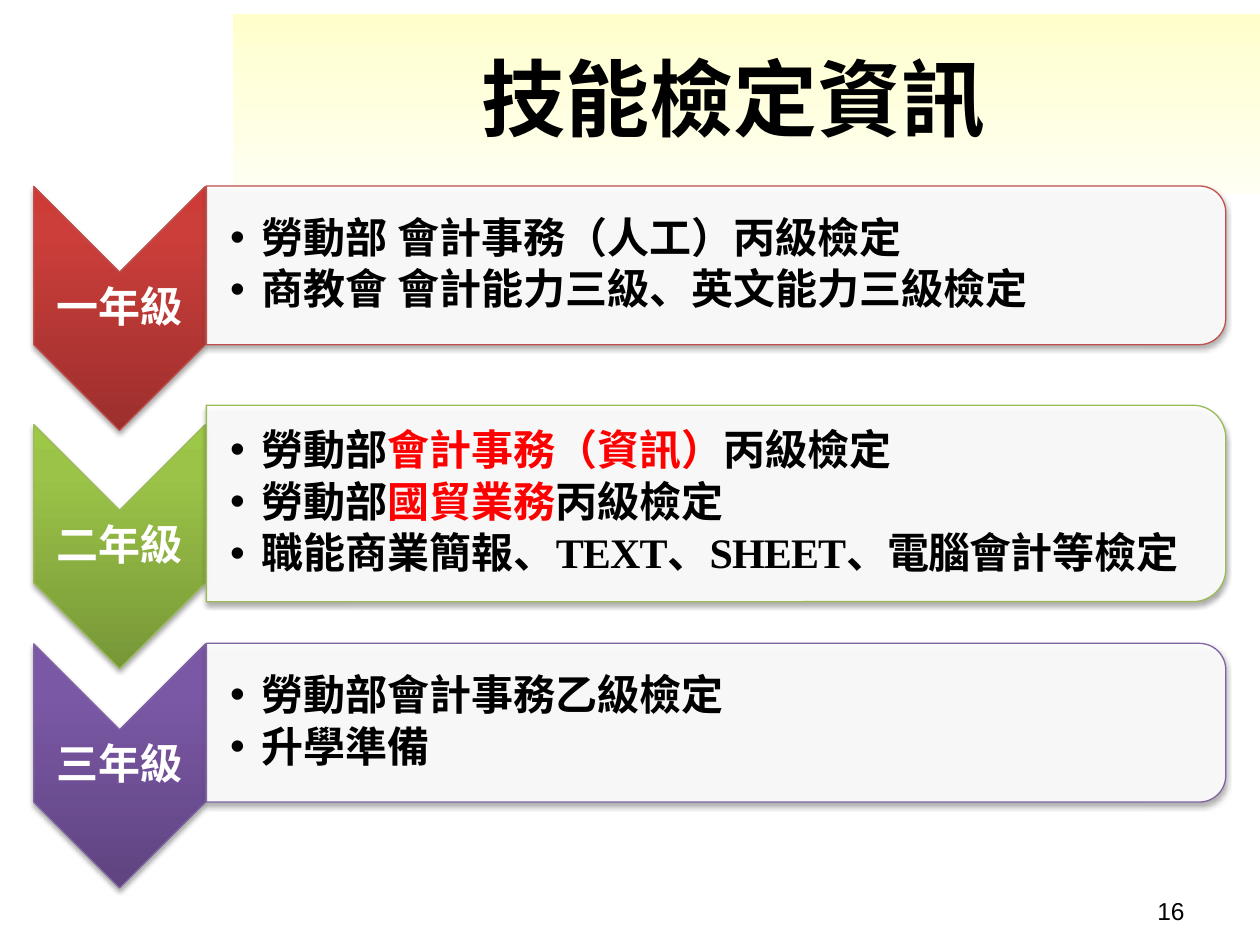
from lxml import etree
from pptx import Presentation
from pptx.dml.color import RGBColor
from pptx.enum.shapes import MSO_SHAPE
from pptx.enum.text import MSO_ANCHOR, PP_ALIGN
from pptx.oxml import parse_xml
from pptx.oxml.ns import nsdecls, qn
from pptx.util import Cm, Pt

RECT = MSO_SHAPE.RECTANGLE
CHEVRON = MSO_SHAPE.CHEVRON
PANEL = MSO_SHAPE.ROUND_2_SAME_RECTANGLE
TOP, MIDDLE = MSO_ANCHOR.TOP, MSO_ANCHOR.MIDDLE
LEFT, CENTER, RIGHT = PP_ALIGN.LEFT, PP_ALIGN.CENTER, PP_ALIGN.RIGHT

CJK, SERIF, SANS = "Noto Sans CJK SC", "Times New Roman", "Arial"
COLORS = {
    "black": "000000",
    "white": "FFFFFF",
    "red": "FF0000",
    "header": ["FFFFCC", "FFFFF3"],
    "first": ["9C2F2D", "CB3E3A", "CE3B37"],
    "first_line": "C0504D",
    "second": ["779737", "9BC348", "9DC746"],
    "second_line": "9BBB59",
    "third": ["5F4480", "7B58A6", "7C57A8"],
    "third_line": "8064A2",
}

CHEVRON_X, CHEVRON_W, CHEVRON_H = 2.41, 3.46, 4.92
PANEL_LEFT, PANEL_W = 4.16, 20.55
PANEL_RISE = 0.87

GRADES = [
    ("一年級", "first", 6.22, 3.2, [
        [("勞動部 會計事務（人工）丙級檢定", "black", 0)],
        [("商教會 會計能力三級、英文能力三級檢定", "black", 0)],
    ]),
    ("二年級", "second", 11.02, 3.96, [
        [("勞動部", "black", 0), ("會計事務（資訊）", "red", 0), ("丙級檢定", "black", 0)],
        [("勞動部", "black", 0), ("國貿業務", "red", 0), ("丙級檢定", "black", 0)],
        [("職能商業簡報", "black", 0), ("、TEXT、SHEET、電腦會計", "black", -50),
         ("等檢定", "black", 0)],
    ]),
    ("三年級", "third", 15.44, 3.2, [
        [("勞動部會計事務乙級檢定", "black", 0)],
        [("升學準備", "black", 0)],
    ]),
]


def rgb(key):
    return RGBColor.from_string(COLORS[key])


def fill_gradient(sp, colors, positions, angle):
    stops = "".join(
        f'<a:gs pos="{pos * 1000}"><a:srgbClr val="{color}"/></a:gs>'
        for pos, color in zip(positions, colors))
    sp._element.spPr.find(qn("a:prstGeom")).addnext(parse_xml(
        f'<a:gradFill {nsdecls("a")} rotWithShape="0"><a:gsLst>{stops}</a:gsLst>'
        f'<a:lin ang="{angle * 60000}" scaled="0"/></a:gradFill>'))


def add_shadow(sp):
    effects = sp._element.spPr.find(qn("a:effectLst"))
    effects.append(parse_xml(
        f'<a:outerShdw {nsdecls("a")} blurRad="{Pt(3.1)}" dist="{Pt(1.8)}" '
        'dir="5400000" rotWithShape="0"><a:srgbClr val="000000">'
        '<a:alpha val="35000"/></a:srgbClr></a:outerShdw>'))


def add_turned_shape(s, kind, x, y, width, height, line):
    sp = s.shapes.add_shape(kind, Cm(x - height / 2), Cm(y - width / 2),
                            Cm(height), Cm(width))
    sp.rotation = 90
    sp.shadow.inherit = False
    sp.line.color.rgb = rgb(line)
    sp.line.width = Pt(0.75)
    add_shadow(sp)
    return sp


def add_text_box(s, left, top, width, height, anchor, margins=None):
    tf = s.shapes.add_textbox(Cm(left), Cm(top), Cm(width), Cm(height)).text_frame
    tf.word_wrap = True
    tf.vertical_anchor = anchor
    if margins:
        tf.margin_left, tf.margin_right = Cm(margins[0]), Cm(margins[1])
        tf.margin_top = tf.margin_bottom = Cm(0.05)
    return tf


def format_run(r, size, font, color, bold=True):
    r.font.size = Pt(size)
    r.font.bold = bold
    r.font.name = font
    r.font.color.rgb = rgb(color)
    etree.SubElement(r.font._element, qn("a:ea")).set("typeface", CJK)


def add_line(tf, text, size, font, color, align, bold=True):
    tf.text = text
    p = tf.paragraphs[0]
    p.alignment = align
    format_run(p.runs[0], size, font, color, bold)
    return p


def add_bullet(p, runs):
    pPr = p._p.get_or_add_pPr()
    pPr.set("marL", str(Cm(0.64)))
    pPr.set("indent", str(Cm(-0.64)))
    etree.SubElement(pPr, qn("a:buFont")).set("typeface", SANS)
    etree.SubElement(pPr, qn("a:buChar")).set("char", "•")
    p.alignment = LEFT
    p.line_spacing = 0.9
    p.space_after = Pt(3.6)
    for text, color, spacing in runs:
        r = p.add_run()
        r.text = text
        format_run(r, 24, SERIF, color)
        if spacing:
            r.font._element.set("spc", str(spacing))


def add_header(s):
    sp = s.shapes.add_shape(RECT, Cm(4.7), Cm(0.28), Cm(20.7), Cm(3.63))
    sp.shadow.inherit = False
    sp.line.fill.background()
    fill_gradient(sp, COLORS["header"], [0, 100], 90)
    tf = add_text_box(s, 4.7, 0.97, 20.19, 1.96, MIDDLE)
    add_line(tf, "技能檢定資訊", 48, CJK, "black", CENTER)


def add_grade(s, label, theme, y, panel_h, bullets):
    line = f"{theme}_line"
    sp = add_turned_shape(s, CHEVRON, CHEVRON_X, y, CHEVRON_W, CHEVRON_H, line)
    fill_gradient(sp, COLORS[theme], [0, 80, 100], 270)
    tf = add_text_box(s, CHEVRON_X - CHEVRON_W / 2, y - 0.74, CHEVRON_W, 1.48,
                      MIDDLE, (0.05, 0.05))
    add_line(tf, label, 24, CJK, "white", CENTER).line_spacing = 0.9

    panel_y = y - PANEL_RISE
    sp = add_turned_shape(s, PANEL, PANEL_LEFT + PANEL_W / 2, panel_y,
                          PANEL_W, panel_h, line)
    sp.fill.solid()
    sp.fill.fore_color.rgb = rgb("white")
    color = sp._element.spPr.find(qn("a:solidFill"))[0]
    etree.SubElement(color, qn("a:alpha")).set("val", "90000")

    text_h = panel_h - 0.34
    tf = add_text_box(s, PANEL_LEFT, panel_y - text_h / 2, PANEL_W - 0.18, text_h,
                      MIDDLE, (0.48, 0.05))
    for i, runs in enumerate(bullets):
        add_bullet(tf.add_paragraph() if i else tf.paragraphs[0], runs)


def main():
    prs = Presentation()
    prs.slide_width, prs.slide_height = Cm(25.4), Cm(19.05)
    s = prs.slides.add_slide(prs.slide_layouts[6])
    add_header(s)
    for grade in GRADES:
        add_grade(s, *grade)
    tf = add_text_box(s, 18.2, 17.93, 5.93, 1, TOP)
    add_line(tf, "16", 14, SANS, "black", RIGHT, bold=False)
    prs.save("out.pptx")


if __name__ == "__main__":
    main()
